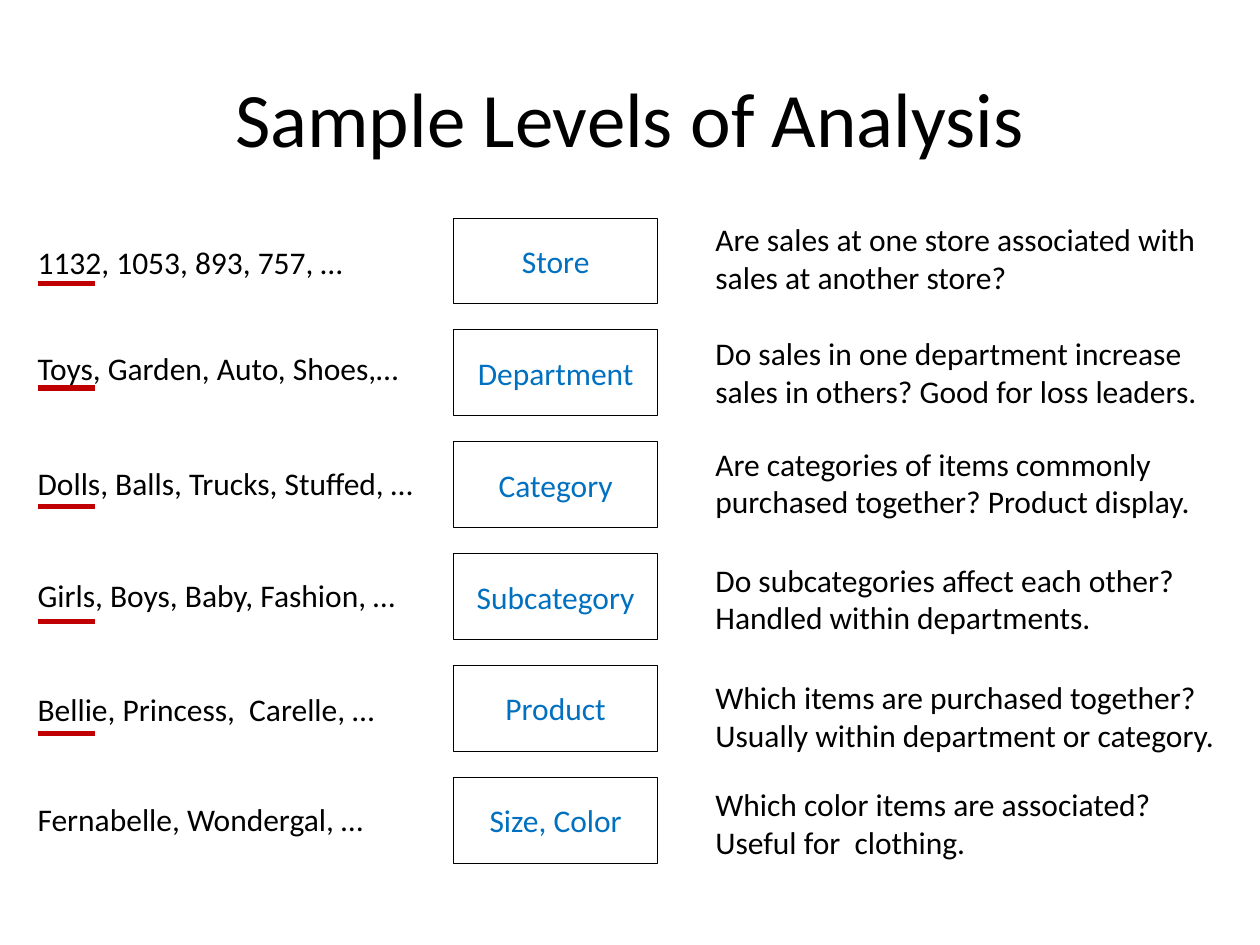
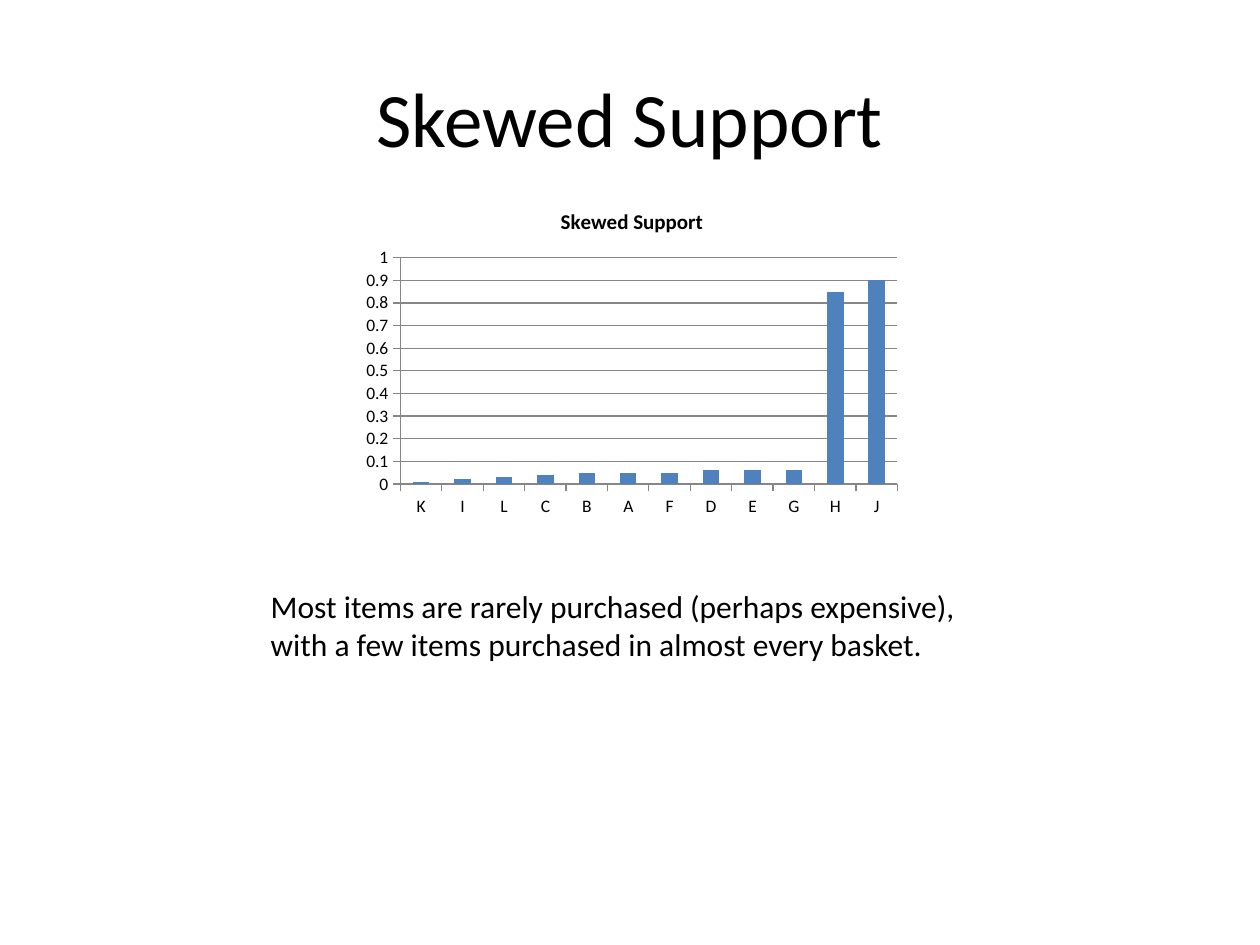
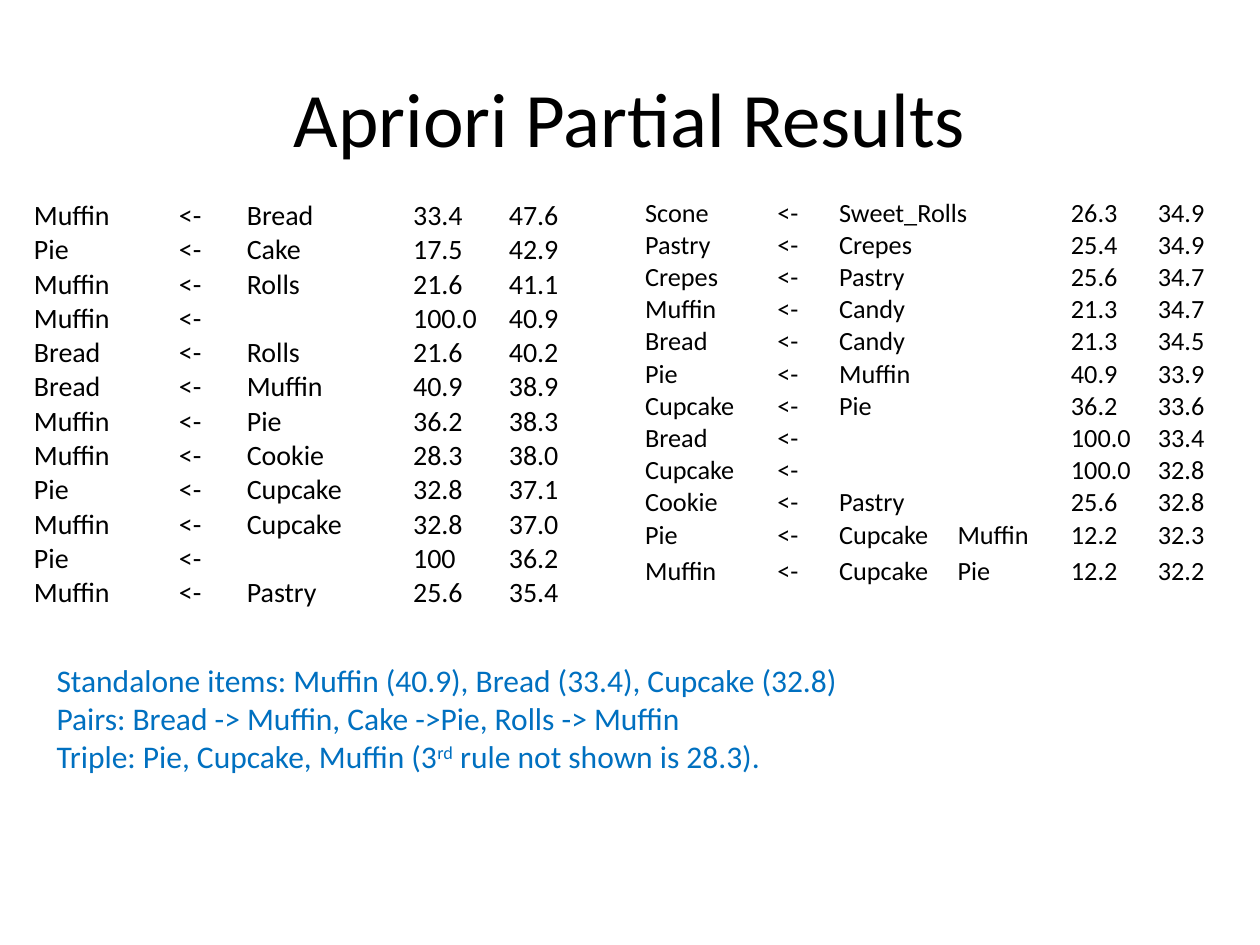
from dataclasses import dataclass

import pptx
import pptx.chart.data
import pptx.dml.color
import pptx.enum.chart
import pptx.enum.shapes
import pptx.enum.text
import pptx.oxml.ns
import pptx.util
from lxml import etree

RGBColor = pptx.dml.color.RGBColor
BLACK = RGBColor(0x00, 0x00, 0x00)
BLUE = RGBColor(0x00, 0x70, 0xC0)
RED = RGBColor(0xC0, 0x00, 0x00)
BAR_BLUE = RGBColor(0x4F, 0x81, 0xBD)
AXIS_GREY = RGBColor(0x86, 0x86, 0x86)
FONT = "Calibri"
TITLE_SIZE, TEXT_SIZE = 44, 18

# The slide is a grid of 100 columns by 75 rows.
SLIDE_WIDTH, SLIDE_HEIGHT = pptx.util.Inches(10), pptx.util.Inches(7.5)
COLUMN, ROW = SLIDE_WIDTH / 100, SLIDE_HEIGHT / 75
TITLE_ONLY_LAYOUT = 5


@dataclass(frozen=True)
class Area:
    """A rectangle in grid columns and rows."""
    column: float
    row: float
    columns: float
    rows: float

    def emu(self) -> tuple[int, int, int, int]:
        return (round(self.column * COLUMN), round(self.row * ROW),
                round(self.columns * COLUMN), round(self.rows * ROW))


@dataclass(frozen=True)
class Level:
    name: str
    examples: str
    examples_row: float
    underline_row: float | None
    question: str
    question_row: float


@dataclass(frozen=True)
class RuleTable:
    area: Area
    column_widths: tuple[float, ...]
    row_heights: tuple[float, ...]
    size: float
    inset: float
    rules: tuple[tuple[str, str, str, str, str], ...]


LEVELS = (
    Level("Store", "1132, 1053, 893, 757, …", 18.8, 22.5,
          "Are sales at one store associated with sales at another store?", 17),
    Level("Department", "Toys, Garden, Auto, Shoes,…", 27.2, 30.8,
          "Do sales in one department increase sales in others? Good for loss leaders.", 26),
    Level("Category", "Dolls, Balls, Trucks, Stuffed, …", 36.3, 40.2,
          "Are categories of items commonly purchased together? Product display.", 34.8),
    Level("Subcategory", "Girls, Boys, Baby, Fashion, …", 45.2, 49.3,
          "Do subcategories affect each other? Handled within departments.", 44),
    Level("Product", "Bellie, Princess,  Carelle, …", 54.3, 58.2,
          "Which items are purchased together? Usually within department or category.", 53.3),
    Level("Size, Color", "Fernabelle, Wondergal, …", 63, None,
          "Which color items are associated? Useful for  clothing.", 61.8),
)
FIRST_LEVEL_ROW, LEVEL_PITCH = 17.3, 8.88

ITEM_SUPPORT = {
    "K": 0.01, "I": 0.02, "L": 0.03, "C": 0.04, "B": 0.05, "A": 0.05,
    "F": 0.05, "D": 0.06, "E": 0.06, "G": 0.06, "H": 0.85, "J": 0.9,
}

# Each rule: result, first and second condition, support, confidence.
STRONGER_RULES = RuleTable(
    Area(1.5, 15.3, 45.3, 32.5), (11.5, 5.4, 10.4, 2.8, 7.6, 7.6),
    (3.2,) + (2.7,) * 11, 16, 1.2, (
        ("Muffin", "Bread", "", "33.4", "47.6"),
        ("Pie", "Cake", "", "17.5", "42.9"),
        ("Muffin", "Rolls", "", "21.6", "41.1"),
        ("Muffin", "", "", "100.0", "40.9"),
        ("Bread", "Rolls", "", "21.6", "40.2"),
        ("Bread", "Muffin", "", "40.9", "38.9"),
        ("Muffin", "Pie", "", "36.2", "38.3"),
        ("Muffin", "Cookie", "", "28.3", "38.0"),
        ("Pie", "Cupcake", "", "32.8", "37.1"),
        ("Muffin", "Cupcake", "", "32.8", "37.0"),
        ("Pie", "", "", "100", "36.2"),
        ("Muffin", "Pastry", "", "25.6", "35.4"),
    ))
WEAKER_RULES = RuleTable(
    Area(50.2, 15.3, 47.7, 30.8), (10.5, 4.9, 9.4, 9, 6.9, 6.9),
    (2.9,) + (2.5,) * 10 + (2.9,), 15, 1, (
        ("Scone", "Sweet_Rolls", "", "26.3", "34.9"),
        ("Pastry", "Crepes", "", "25.4", "34.9"),
        ("Crepes", "Pastry", "", "25.6", "34.7"),
        ("Muffin", "Candy", "", "21.3", "34.7"),
        ("Bread", "Candy", "", "21.3", "34.5"),
        ("Pie", "Muffin", "", "40.9", "33.9"),
        ("Cupcake", "Pie", "", "36.2", "33.6"),
        ("Bread", "", "", "100.0", "33.4"),
        ("Cupcake", "", "", "100.0", "32.8"),
        ("Cookie", "Pastry", "", "25.6", "32.8"),
        ("Pie", "Cupcake", "Muffin", "12.2", "32.3"),
        ("Muffin", "Cupcake", "Pie", "12.2", "32.2"),
    ))


def set_font(font, size: float, color: RGBColor = BLACK) -> None:
    font.name = FONT
    font.size = pptx.util.Pt(size)
    font.color.rgb = color


def add_titled_slide(deck, title: str):
    slide = deck.slides.add_slide(deck.slide_layouts[TITLE_ONLY_LAYOUT])
    heading = slide.shapes.title
    heading.left, heading.top, heading.width, heading.height = Area(5, 3, 90, 12.5).emu()
    heading.text_frame.text = title
    set_font(heading.text_frame.paragraphs[0].font, TITLE_SIZE)
    return slide


def add_text(slide, area: Area, text: str, color: RGBColor = BLACK):
    frame = slide.shapes.add_textbox(*area.emu()).text_frame
    frame.word_wrap = True
    frame.auto_size = pptx.enum.text.MSO_AUTO_SIZE.SHAPE_TO_FIT_TEXT
    frame.text = text
    for paragraph in frame.paragraphs:
        set_font(paragraph.font, TEXT_SIZE, color)
    return frame


def add_level_box(slide, area: Area, name: str) -> None:
    box = slide.shapes.add_shape(pptx.enum.shapes.MSO_SHAPE.RECTANGLE, *area.emu())
    box.shadow.inherit = False
    box.fill.background()
    box.line.color.rgb = BLACK
    box.line.width = pptx.util.Pt(0.5)
    frame = box.text_frame
    frame.text = name
    frame.vertical_anchor = pptx.enum.text.MSO_ANCHOR.MIDDLE
    frame.paragraphs[0].alignment = pptx.enum.text.PP_ALIGN.CENTER
    set_font(frame.paragraphs[0].font, TEXT_SIZE, BLUE)


def add_underline(slide, row: float) -> None:
    left, top, width, _ = Area(3, row, 4.5, 0).emu()
    underline = slide.shapes.add_connector(
        pptx.enum.shapes.MSO_CONNECTOR.STRAIGHT, left, top, left + width, top)
    underline.line.color.rgb = RED
    underline.line.width = pptx.util.Pt(3)
    etree.SubElement(underline._element.spPr, pptx.oxml.ns.qn("a:effectLst"))


def add_support_chart(slide, area: Area) -> None:
    support = pptx.chart.data.CategoryChartData()
    support.categories = list(ITEM_SUPPORT)
    support.add_series("Series 1", list(ITEM_SUPPORT.values()))
    chart = slide.shapes.add_chart(
        pptx.enum.chart.XL_CHART_TYPE.COLUMN_CLUSTERED, *area.emu(), support).chart
    set_font(chart.font, 10)
    chart.has_legend = False
    chart.has_title = True
    chart.chart_title.text_frame.text = "Skewed Support"
    title_font = chart.chart_title.text_frame.paragraphs[0].font
    set_font(title_font, 12)
    title_font.bold = True

    plot = chart.plots[0]
    plot.gap_width = 150
    plot.vary_by_categories = False
    bars = plot.series[0].format.fill
    bars.solid()
    bars.fore_color.rgb = BAR_BLUE

    scale = chart.value_axis
    scale.minimum_scale, scale.maximum_scale, scale.major_unit = 0, 1, 0.1
    scale.has_major_gridlines = True
    chart.category_axis.has_major_gridlines = False
    for axis in (scale, chart.category_axis):
        axis.major_tick_mark = pptx.enum.chart.XL_TICK_MARK.OUTSIDE
        axis.minor_tick_mark = pptx.enum.chart.XL_TICK_MARK.NONE
    for ruled in (scale, chart.category_axis, scale.major_gridlines):
        ruled.format.line.color.rgb = AXIS_GREY
        ruled.format.line.width = pptx.util.Pt(0.75)


def fill_cell(cell, text: str, size: float, inset: float) -> None:
    cell.fill.background()
    cell.vertical_anchor = pptx.enum.text.MSO_ANCHOR.BOTTOM
    cell.margin_left = cell.margin_right = round(inset * COLUMN)
    cell.margin_top = cell.margin_bottom = 0
    cell.text = text
    paragraph = cell.text_frame.paragraphs[0]
    set_font(paragraph.font, size)
    if not text:
        # An empty cell takes its line height from the end-of-paragraph size.
        etree.SubElement(paragraph._p, pptx.oxml.ns.qn("a:endParaRPr"), sz=str(size * 100))


def add_rule_table(slide, listing: RuleTable) -> None:
    table = slide.shapes.add_table(
        len(listing.rules), len(listing.column_widths), *listing.area.emu()).table
    table.first_row = table.horz_banding = False
    for column, width in zip(table.columns, listing.column_widths):
        column.width = round(width * COLUMN)
    for row, height, rule in zip(table.rows, listing.row_heights, listing.rules):
        row.height = round(height * ROW)
        result, *rest = rule
        for cell, text in zip(row.cells, (result, "<-", *rest)):
            fill_cell(cell, text, listing.size, listing.inset)
    if listing is WEAKER_RULES:
        table.cell(0, 2).merge(table.cell(0, 3))


def build_levels(deck) -> None:
    slide = add_titled_slide(deck, "Sample Levels of Analysis")
    for index, level in enumerate(LEVELS):
        add_level_box(slide, Area(36, FIRST_LEVEL_ROW + index * LEVEL_PITCH, 16.2, 6.8),
                      level.name)
        add_text(slide, Area(2, level.examples_row, 32.5, 4), level.examples)
        add_text(slide, Area(55.8, level.question_row, 41.7, 7.1), level.question)
        if level.underline_row is not None:
            add_underline(slide, level.underline_row)


def build_skewed_support(deck) -> None:
    slide = add_titled_slide(deck, "Skewed Support")
    add_support_chart(slide, Area(28.2, 15.1, 43.9, 26.4))
    add_text(slide, Area(20.5, 46.1, 59.2, 7.1),
             "Most items are rarely purchased (perhaps expensive), "
             "with a few items purchased in almost every basket.")


def build_apriori_results(deck) -> None:
    slide = add_titled_slide(deck, "Apriori Partial Results")
    for listing in (STRONGER_RULES, WEAKER_RULES):
        add_rule_table(slide, listing)
    summary = add_text(
        slide, Area(3.5, 52, 75.9, 10.1),
        "Standalone items: Muffin (40.9), Bread (33.4), Cupcake (32.8)\n"
        "Pairs: Bread -> Muffin, Cake ->Pie, Rolls -> Muffin\n"
        "Triple: Pie, Cupcake, Muffin (3", BLUE)
    triple = summary.paragraphs[-1]
    ordinal = triple.add_run()
    ordinal.text = "rd"
    ordinal._r.get_or_add_rPr().set("baseline", "30000")
    triple.add_run().text = " rule not shown is 28.3)."


def main() -> None:
    deck = pptx.Presentation()
    deck.slide_width, deck.slide_height = SLIDE_WIDTH, SLIDE_HEIGHT
    build_levels(deck)
    build_skewed_support(deck)
    build_apriori_results(deck)
    deck.save("out.pptx")


if __name__ == "__main__":
    main()
